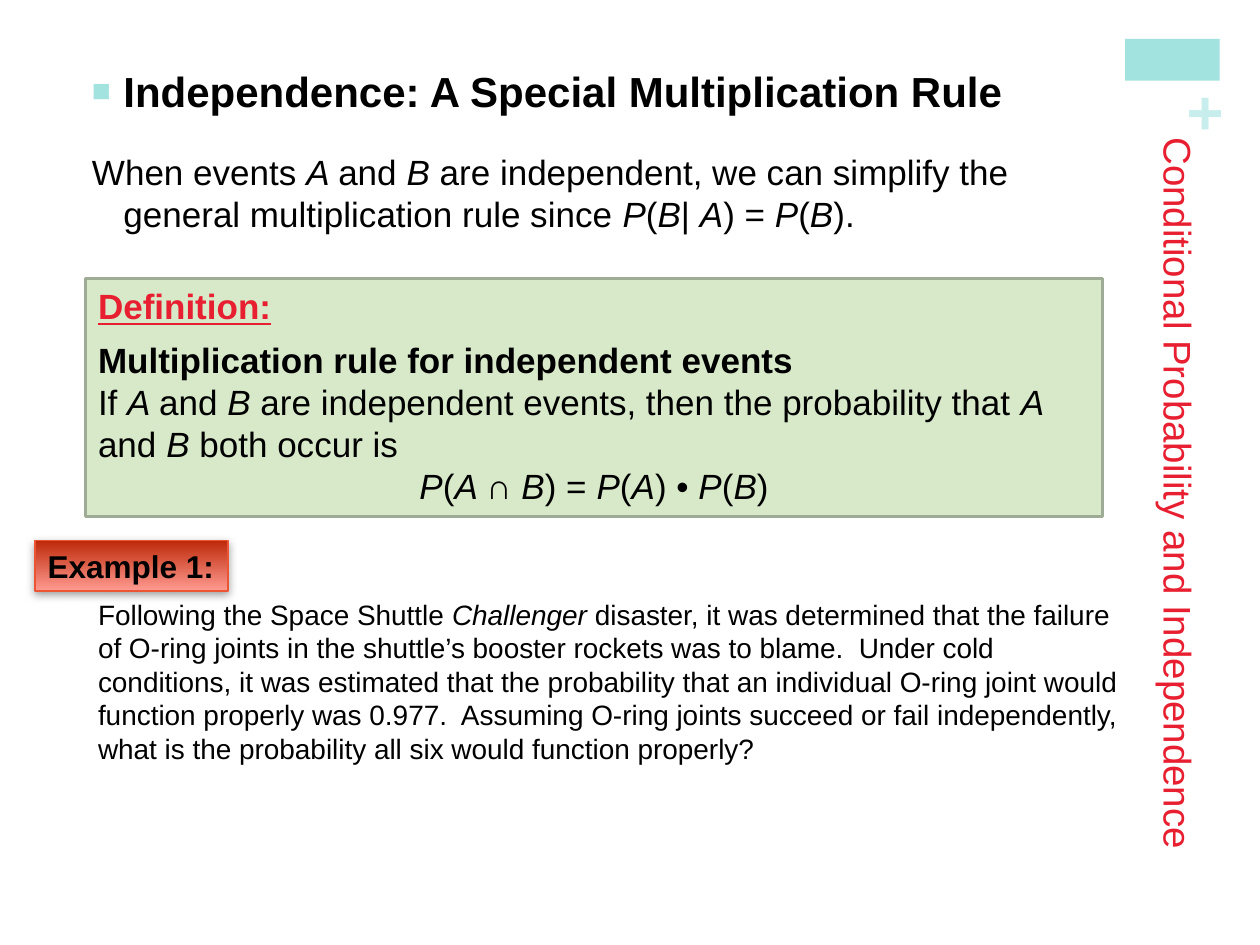
import pptx
import pptx.dml.color
import pptx.enum.shapes
import pptx.enum.text
import pptx.oxml
import pptx.oxml.ns
import pptx.util

INK, RED, TEAL, PALE_TEAL = "000000", "E81F30", "A2E3DF", "C7EEEC"
PP_ALIGN = pptx.enum.text.PP_ALIGN
AUTO_SIZE = pptx.enum.text.MSO_AUTO_SIZE
Pt, Inches = pptx.util.Pt, pptx.util.Inches


def color(hex_value):
    return pptx.dml.color.RGBColor.from_string(hex_value)


def xml(tag, attributes, children=""):
    namespace = pptx.oxml.ns.nsdecls("a")
    return pptx.oxml.parse_xml(f"<a:{tag} {namespace} {attributes}>{children}</a:{tag}>")


def apply(target, values):
    for name, value in values.items():
        setattr(target, name, value)


class SlideBuilder:
    """Places elements on a grid of 100 columns by 75 rows."""

    columns, rows = 100, 75
    font = "Arial"

    def __init__(self, deck):
        self.deck = deck
        self.slide = deck.slides.add_slide(deck.slide_layouts[1])
        self.shapes = self.slide.shapes

    def area(self, left, top, width, height):
        column = self.deck.slide_width / self.columns
        row = self.deck.slide_height / self.rows
        return [round(n) for n in (left * column, top * row, width * column, height * row)]

    def placeholder(self, index, *cells):
        holder = self.slide.placeholders[index]
        apply(holder, dict(zip(("left", "top", "width", "height"), self.area(*cells))))
        return holder

    def text_box(self, *cells):
        return self.shapes.add_textbox(*self.area(*cells))

    def panel(self, *cells, fill, line=None, line_width=0):
        """Draw a rectangle; two fill colours make a top-to-bottom gradient."""
        panel = self.shapes.add_shape(
            pptx.enum.shapes.MSO_SHAPE.RECTANGLE, *self.area(*cells))
        panel.shadow.inherit = False
        if isinstance(fill, str):
            panel.fill.solid()
            panel.fill.fore_color.rgb = color(fill)
        else:
            panel.fill.gradient()
            panel.fill.gradient_angle = 270
            for position, (stop, shade) in enumerate(zip(panel.fill.gradient_stops, fill)):
                stop.position = position
                stop.color.rgb = color(shade)
        if line:
            panel.line.color.rgb = color(line)
            panel.line.width = Pt(line_width)
        else:
            panel.line.fill.background()
        return panel

    def drop_shadow(self, shape, shade, opacity, blur, distance):
        effects = shape._element.spPr.find(pptx.oxml.ns.qn("a:effectLst"))
        effects.append(xml(
            "outerShdw",
            f'blurRad="{Pt(blur)}" dist="{Pt(distance)}" dir="5400000" rotWithShape="0"',
            f'<a:srgbClr val="{shade}"><a:alpha val="{opacity * 1000}"/></a:srgbClr>'))

    def frame(self, shape, **values):
        defaults = {"word_wrap": True, "auto_size": AUTO_SIZE.NONE,
                    "vertical_anchor": pptx.enum.text.MSO_ANCHOR.TOP}
        apply(shape.text_frame, {**defaults, **values})

    def paragraph(self, shape, text, size, shade=INK, bold=False, underline=None, **spacing):
        """Add a paragraph; *text* is italic and ^text^ switches bold."""
        frame = shape.text_frame
        paragraph = frame.add_paragraph() if frame.text else frame.paragraphs[0]
        apply(paragraph, {"alignment": PP_ALIGN.LEFT, "space_before": Pt(0), **spacing})
        italic = False
        for weight, stretch in enumerate(text.split("^")):
            for turn, piece in enumerate(stretch.split("*")):
                italic = italic != bool(turn)
                if piece:
                    run = paragraph.add_run()
                    run.text = piece
                    apply(run.font, {"name": self.font, "size": Pt(size), "italic": italic,
                                     "bold": bold != bool(weight % 2), "underline": underline})
                    run.font.color.rgb = color(shade)
        return paragraph

    def hang(self, paragraph, indent, bullet=None, shade=INK, percent=100):
        properties = paragraph._p.get_or_add_pPr()
        properties.set("marL", str(Inches(indent)))
        properties.set("indent", str(-Inches(indent)))
        if bullet:
            properties.append(xml("buClr", "", f'<a:srgbClr val="{shade}"/>'))
            properties.append(xml("buSzPct", f'val="{percent * 1000}"'))
            properties.append(xml("buFont", f'typeface="{self.font}"'))
            properties.append(xml("buChar", f'char="{bullet}"'))
        else:
            properties.append(xml("buNone", ""))


def main():
    deck = pptx.Presentation()
    deck.slide_width, deck.slide_height = Inches(10), Inches(7.5)
    page = SlideBuilder(deck)

    page.panel(89.3, 3.1, 7.5, 3.3, fill=TEAL)
    plus = page.text_box(94, 6.1, 2.8, 6.1)
    plus.rotation = 270
    page.frame(plus, margin_left=0, margin_right=0, margin_top=0, margin_bottom=0)
    page.paragraph(plus, "+", 36, PALE_TEAL, bold=True)

    chapter = page.placeholder(0, 89, 10.4, 7.4, 60.1)
    page.frame(chapter)
    chapter.text_frame._txBody.bodyPr.set("vert", "eaVert")
    page.paragraph(chapter, "Conditional Probability and Independence", 22, RED)

    intro = page.placeholder(1, 6.8, 4, 80.7, 23.8)
    page.frame(intro, margin_left=Inches(0.05), margin_top=Inches(0.12))
    heading = page.paragraph(
        intro, "Independence: A Special Multiplication Rule", 24, bold=True)
    page.hang(heading, 0.25, "■", TEAL, 75)
    premise = page.paragraph(
        intro, "When events *A *and *B *are independent, we can simplify the general "
        "multiplication rule since *P*(*B*| *A*) = *P*(*B*).", 20, space_before=Pt(20))
    page.hang(premise, 0.25)

    definition = page.panel(6.8, 22.1, 80.7, 18.9, fill="D7E9C9", line="9FAC95", line_width=2)
    page.frame(definition, auto_size=AUTO_SIZE.SHAPE_TO_FIT_TEXT)
    page.paragraph(definition, "Definition:", 20, RED, bold=True, underline=True)
    page.paragraph(definition, "Multiplication rule for independent events", 20,
                   bold=True, space_before=Pt(7))
    page.paragraph(definition, "If *A *and *B *are independent events, then the probability "
                   "that *A *and *B *both occur is", 20)
    page.paragraph(definition, "*P*(*A *^∩ ^*B*) = *P*(*A*) • *P*(*B*)", 20,
                   alignment=PP_ALIGN.CENTER, space_after=Pt(12))

    page.shapes = page.slide.shapes.add_group_shape().shapes
    problem = page.text_box(6.8, 46.9, 84, 14.5)
    page.frame(problem, auto_size=AUTO_SIZE.SHAPE_TO_FIT_TEXT)
    page.paragraph(
        problem, "Following the Space Shuttle *Challenger* disaster, it was determined that "
        "the failure of O-ring joints in the shuttle’s booster rockets was to blame.  Under "
        "cold conditions, it was estimated that the probability that an individual O-ring "
        "joint would function properly was 0.977.  Assuming O-ring joints succeed or fail "
        "independently, what is the probability all six would function properly?", 16)
    example = page.panel(2.8, 42.9, 15.3, 4, fill=("BD2909", "FF9A90"),
                         line="EC5534", line_width=1)
    page.drop_shadow(example, "808080", opacity=75, blur=5, distance=2)
    page.frame(example, word_wrap=False, auto_size=AUTO_SIZE.SHAPE_TO_FIT_TEXT)
    page.paragraph(example, "Example 1:", 18, bold=True)

    deck.save("out.pptx")


if __name__ == "__main__":
    main()
